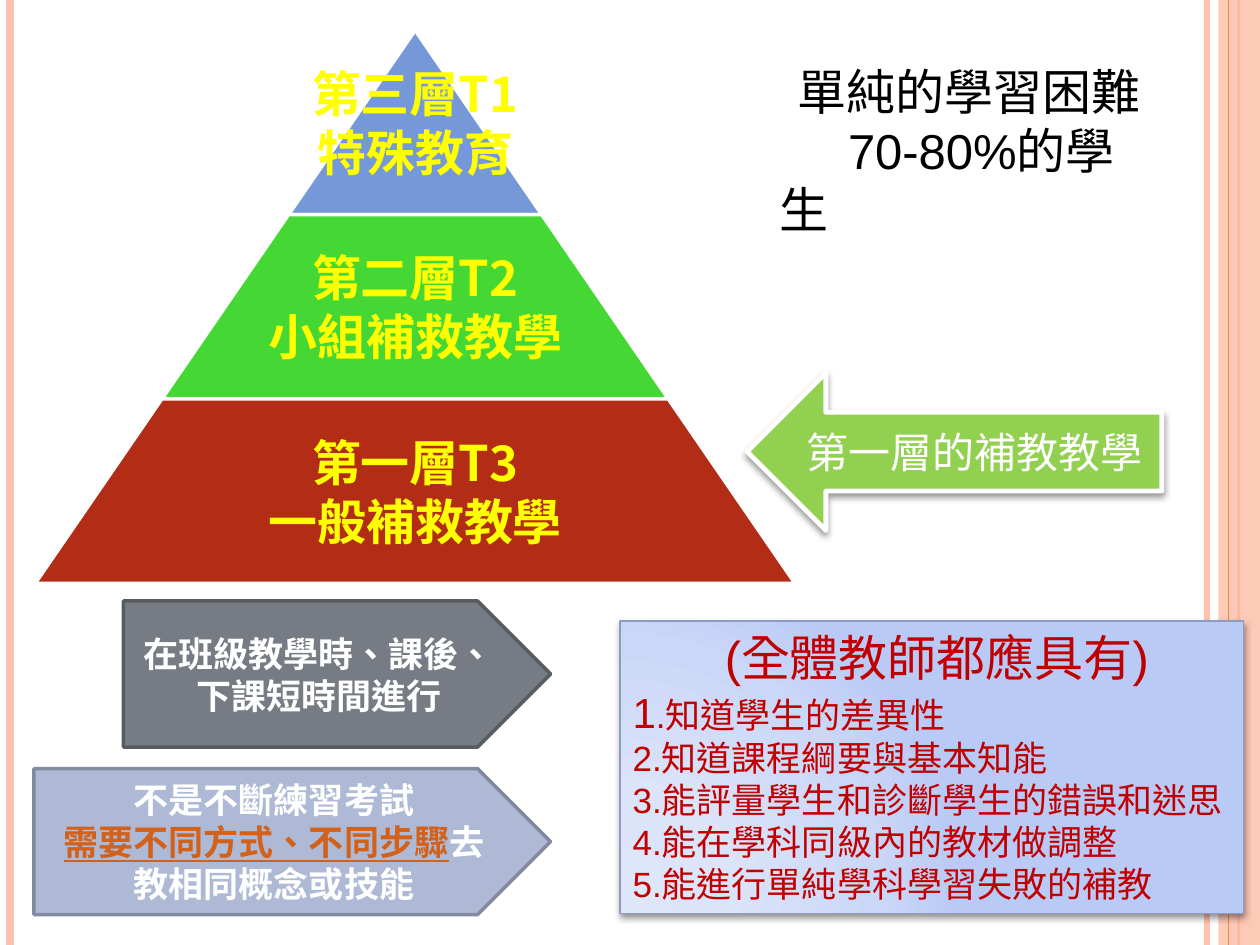
import lxml.etree
import pptx
import pptx.dml.color
import pptx.enum.shapes
import pptx.enum.text
import pptx.oxml
import pptx.oxml.ns
import pptx.util

Inches = pptx.util.Inches
Pt = pptx.util.Pt
RGBColor = pptx.dml.color.RGBColor
Shape = pptx.enum.shapes.MSO_SHAPE
Align = pptx.enum.text.PP_ALIGN
Anchor = pptx.enum.text.MSO_ANCHOR
qn = pptx.oxml.ns.qn

WHITE = RGBColor(0xFF, 0xFF, 0xFF)
BLACK = RGBColor(0x00, 0x00, 0x00)
YELLOW = RGBColor(0xFF, 0xFF, 0x00)
PEACH = RGBColor(0xFE, 0xC3, 0xAE)
ORANGE = RGBColor(0xFE, 0x86, 0x37)
BLUE = RGBColor(0x75, 0x98, 0xD9)
GREEN = RGBColor(0x45, 0xD8, 0x34)
BRICK = RGBColor(0xB3, 0x2C, 0x16)
LIME = RGBColor(0x92, 0xD0, 0x50)
GRAY = RGBColor(0x77, 0x7C, 0x84)
DARK_GRAY = RGBColor(0x58, 0x5C, 0x62)
LAVENDER = RGBColor(0xAE, 0xBA, 0xD5)
SLATE = RGBColor(0x81, 0x8A, 0x9E)
BOX_EDGE = RGBColor(0x8D, 0x9C, 0xBF)
DEEP_RED = RGBColor(0xC0, 0x00, 0x00)
RUST = RGBColor(0xD2, 0x61, 0x1C)

NAMESPACE = 'xmlns:a="http://schemas.openxmlformats.org/drawingml/2006/main"'
SHADOW = (f'<a:effectLst {NAMESPACE}><a:outerShdw blurRad="50800" dist="25400" dir="5400000" '
          'rotWithShape="0"><a:srgbClr val="000000"><a:alpha val="40000"/></a:srgbClr>'
          '</a:outerShdw></a:effectLst>')
GRADIENT_STOPS = [(0, "DEE6FA"), (30, "DBE4F9"), (75, "CAD7F7"), (100, "B8CAF5")]
PYRAMID_TIERS = [("第三層T1", "特殊教育", BLUE), ("第二層T2", "小組補救教學", GREEN),
                 ("第一層T3", "一般補救教學", BRICK)]
SKILLS = ["(全體教師都應具有)", "1.知道學生的差異性", "2.知道課程綱要與基本知能",
          "3.能評量學生和診斷學生的錯誤和迷思", "4.能在學科同級內的教材做調整",
          "5.能進行單純學科學習失敗的補教"]


def place(shape, box):
    """Move a shape to a box of left, top, width and height in inches."""
    shape.left, shape.top, shape.width, shape.height = map(Inches, box)


def format_font(font, name, size, color, bold=False):
    """Set the face, size, colour and weight of a font."""
    font.name, font.size, font.bold = name, Pt(size), bold
    font.color.rgb = color


def write_paragraphs(text_frame, paragraphs, name, size, color, bold=False, align=Align.CENTER):
    """Fill a frame with paragraphs, each a list of run texts, in one style."""
    text_frame.word_wrap = True
    for index, texts in enumerate(paragraphs):
        paragraph = text_frame.paragraphs[0] if index == 0 else text_frame.add_paragraph()
        paragraph.alignment = align
        paragraph.space_before = Pt(0)
        for text in texts:
            run = paragraph.add_run()
            run.text = text
            format_font(run.font, name, size, color, bold)
            run._r.get_or_add_rPr().set("lang", "zh-TW")


def set_indent(paragraph, indent):
    """Remove the bullet and set the first-line indent in inches."""
    properties = paragraph._p.get_or_add_pPr()
    properties.set("marL", "0")
    properties.set("indent", str(Inches(indent)))
    lxml.etree.SubElement(properties, qn("a:buNone"))


def set_opacity(properties, percent):
    """Give the first solid colour in shape properties an opacity in percent."""
    color = next(properties.iter(qn("a:srgbClr")))
    lxml.etree.SubElement(color, qn("a:alpha")).set("val", str(percent * 1000))


def add_block(slide, kind, box, fill, line, line_width):
    """Add a filled and outlined preset shape without a shadow."""
    shape = slide.shapes.add_shape(kind, *map(Inches, box))
    shape.shadow.inherit = False
    shape.fill.solid()
    shape.fill.fore_color.rgb = fill
    shape.line.color.rgb = line
    shape.line.width = Pt(line_width)
    return shape


def cast_shadow(shape):
    """Replace the effects of a shape by a soft shadow below it."""
    properties = shape._element.spPr
    for effects in properties.findall(qn("a:effectLst")):
        properties.remove(effects)
    properties.append(pptx.oxml.parse_xml(SHADOW))


def add_stripe(slide, x, height, color, width):
    """Draw one vertical stripe from the top of the slide."""
    stripe = slide.shapes.add_connector(pptx.enum.shapes.MSO_CONNECTOR.STRAIGHT,
                                        Inches(x), 0, Inches(x), Inches(height))
    stripe.line.color.rgb = color
    stripe.line.width = Pt(width)
    lxml.etree.SubElement(stripe._element.spPr, qn("a:effectLst"))


def add_side_stripes(slide, height):
    """Draw the stripes at both slide edges, one of them under the band."""
    for x, color, width in [(9.58, PEACH, 3), (0.08, PEACH, 4.5), (9.83, ORANGE, 1.5)]:
        add_stripe(slide, x, height, color, width)
    band = add_block(slide, Shape.RECTANGLE, (9.67, 0, 0.33, height), PEACH, PEACH, 1)
    band.line.fill.background()
    set_opacity(band._element.spPr, 87)
    add_stripe(slide, 9.75, height, ORANGE, 0.75)


def add_pyramid(slide, box):
    """Stack equally high tiers, each one step wider than the one above."""
    left, top, width, height = box
    tier_height = height / len(PYRAMID_TIERS)
    step = width / len(PYRAMID_TIERS)
    for index, (level, teaching, color) in enumerate(PYRAMID_TIERS):
        tier_width = step * (index + 1)
        tier_box = (left + (width - tier_width) / 2, top + index * tier_height,
                    tier_width, tier_height)
        tier = add_block(slide, Shape.TRAPEZOID, tier_box, color, WHITE, 2)
        tier.adjustments[0] = step / 2 / tier_height
        label = slide.shapes.add_textbox(*map(Inches, tier_box))
        label.text_frame.vertical_anchor = Anchor.MIDDLE
        write_paragraphs(label.text_frame, [[level], [teaching]],
                         "Noto Sans CJK JP", 28, YELLOW, True)


def add_student_share(slide, box):
    """Put the share of students into the title placeholder."""
    title = slide.shapes.title
    place(title, box)
    frame = title.text_frame
    frame.auto_size = pptx.enum.text.MSO_AUTO_SIZE.NONE
    frame.vertical_anchor = Anchor.TOP
    write_paragraphs(frame, [["單純的學習困難"], ["70-80%的學生"]], "Arial", 28, BLACK,
                     align=Align.LEFT)
    for paragraph, indent in zip(frame.paragraphs, (0.14, 0.54)):
        set_indent(paragraph, indent)


def add_skill_list(slide, box):
    """Turn the body placeholder into the shaded list of teacher skills."""
    body = slide.placeholders[1]
    place(body, box)
    stops = "".join(f'<a:gs pos="{position * 1000}"><a:srgbClr val="{color}"/></a:gs>'
                    for position, color in GRADIENT_STOPS)
    gradient = pptx.oxml.parse_xml(
        f'<a:gradFill {NAMESPACE}><a:gsLst>{stops}</a:gsLst><a:path path="circle">'
        '<a:fillToRect l="5000" t="100000" r="120000" b="10000"/></a:path></a:gradFill>')
    body._element.spPr.append(gradient)
    body.line.color.rgb = BOX_EDGE
    body.line.width = Pt(1)
    cast_shadow(body)
    frame = body.text_frame
    frame.auto_size = pptx.enum.text.MSO_AUTO_SIZE.NONE
    frame.margin_right = Inches(0.02)
    heading, first, *others = SKILLS
    rows = [[heading], [first[0], first[1:]]] + [[other] for other in others]
    write_paragraphs(frame, rows, "Arial", 20, DEEP_RED, align=Align.LEFT)
    for paragraph in frame.paragraphs:
        set_indent(paragraph, 0)
    frame.paragraphs[0].alignment = Align.CENTER
    frame.paragraphs[0].runs[0].font.size = Pt(28)
    frame.paragraphs[1].runs[0].font.size = Pt(24)
    slide.shapes._spTree.append(body._element)


def add_tier_arrow(slide, box):
    """Point an arrow at the lowest tier."""
    arrow = add_block(slide, Shape.LEFT_ARROW, box, LIME, WHITE, 2.75)
    cast_shadow(arrow)
    arrow.text_frame.vertical_anchor = Anchor.MIDDLE
    write_paragraphs(arrow.text_frame, [["第一層的補教教學"]], "Cambria", 24, WHITE)


def add_note(slide, box, fill, line, paragraphs):
    """Add a pentagon note and return its text frame."""
    note = add_block(slide, Shape.PENTAGON, box, fill, line, 2)
    note.text_frame.vertical_anchor = Anchor.MIDDLE
    write_paragraphs(note.text_frame, paragraphs, "Cambria", 20, WHITE, True)
    return note.text_frame


def main():
    """Build the slide and save it."""
    presentation = pptx.Presentation()
    presentation.slide_width, presentation.slide_height = Inches(10), Inches(7.5)
    slide = presentation.slides.add_slide(presentation.slide_layouts[1])
    add_side_stripes(slide, 7.5)
    add_pyramid(slide, (0.28, 0.24, 6.03, 4.39))
    add_skill_list(slide, (4.92, 4.93, 4.95, 2.32))
    add_student_share(slide, (6.09, 0.44, 3.12, 1.04))
    add_tier_arrow(slide, (5.93, 2.96, 3.29, 1.25))
    add_note(slide, (0.98, 4.77, 3.39, 1.16), GRAY, DARK_GRAY,
             [["在班級教學時、課後、下課短時間進行"]])
    advice = add_note(slide, (0.27, 6.1, 4.1, 1.16), LAVENDER, SLATE,
                      [["不是不斷練習考試"], ["需要不同方式、不同步驟", "去教相同概念或技能"]])
    emphasis = advice.paragraphs[1].runs[0].font
    emphasis.color.rgb = RUST
    emphasis.underline = True
    presentation.save("out.pptx")


if __name__ == "__main__":
    main()
